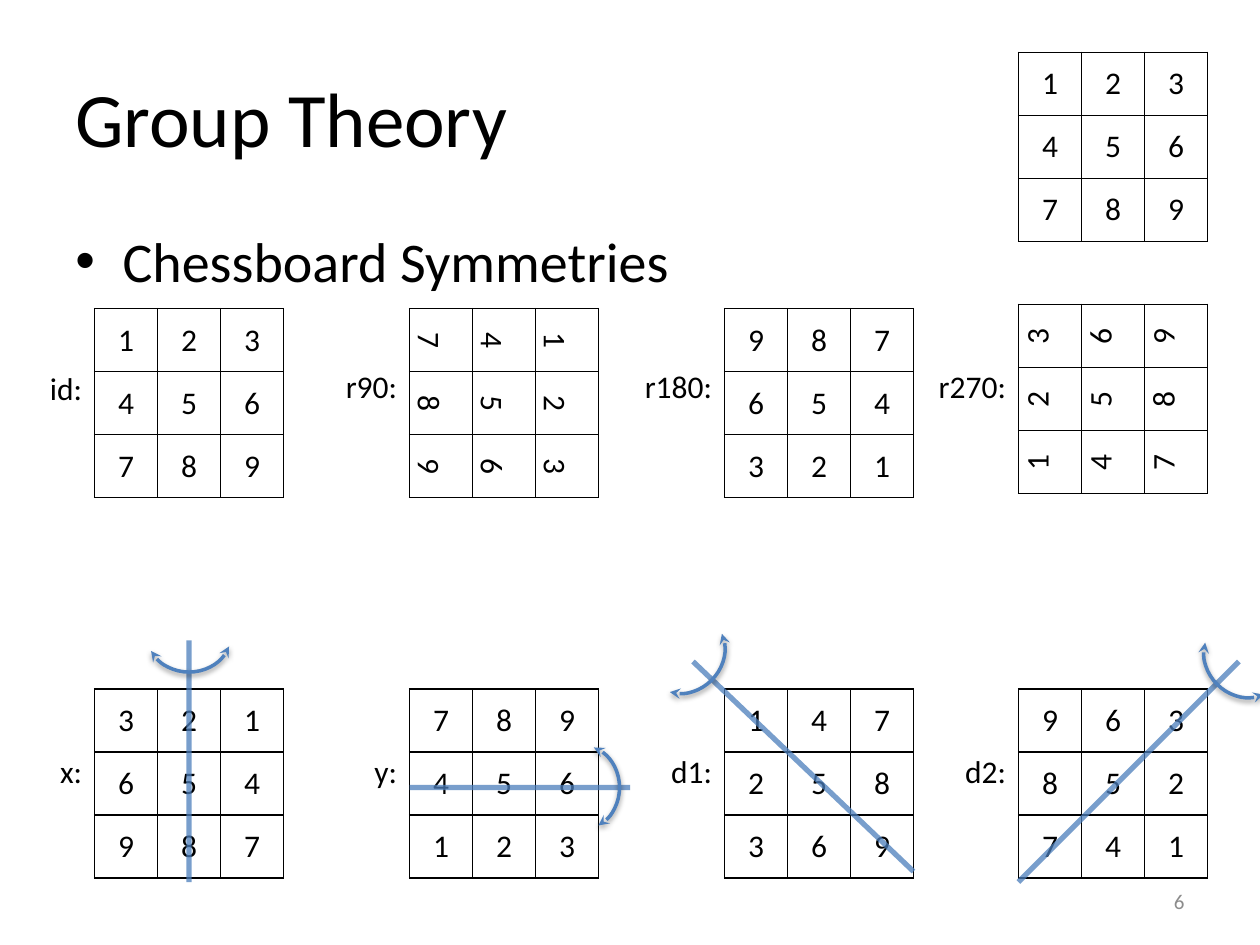
from lxml import etree
from pptx import Presentation
from pptx.dml.color import RGBColor
from pptx.enum.shapes import MSO_CONNECTOR, MSO_SHAPE
from pptx.enum.text import MSO_ANCHOR as Anchor, PP_ALIGN as Align
from pptx.oxml.ns import qn
from pptx.util import Emu, Pt

COLORS = {
    "text": "000000",
    "border": "000000",
    "axis": "4B7EBC",
    "arc": "4F81BD",
    "shadow": "000000",
    "number": "8C8C8C",
}
FONT = "Calibri"
CELL = 60  # side of one board square
ARC_W, ARC_H = 80, 70

# Columns: board left, label width
COLUMNS = [(90, 150), (390, 170), (690, 170), (970, 170)]

# Rotations: label, squares, board top, label offset, text direction
ROTATIONS = [
    ("id:", "123 456 789", 294, 52, None),
    ("r90:", "741 852 963", 294, 50, "vert"),
    ("r180:", "987 654 321", 294, 50, None),
    ("r270:", "369 258 147", 290, 54, "vert270"),
]

# Reflections: label, squares, then axis ends, arc corner (from the board) and turn
REFLECTIONS = [
    ("x:", "321 654 987", (90, -46, 90, 184), (50, -86), 180),
    ("y:", "789 456 123", (0, 94, 210, 94), (125, 59), 90),
    ("d1:", "147 258 369", (-30, -26, 180, 174), (-77, -68), 135),
    ("d2:", "963 852 741", (210, -26, 0, 184), (174, -64), 225),
]


def px(length):
    return Emu(length * 7620)  # 120 px to the inch


def rgb(name):
    return RGBColor.from_string(COLORS[name])


def add_element(parent, tag, **attributes):
    return etree.SubElement(parent, qn(tag), attributes)


def style(paragraph, size, color="text", align=Align.LEFT):
    paragraph.alignment = align
    paragraph.font.name = FONT
    paragraph.font.size = Pt(size)
    paragraph.font.color.rgb = rgb(color)


def add_text(slide, box, text, size, color="text", align=Align.LEFT, anchor=Anchor.TOP):
    frame = slide.shapes.add_textbox(*map(px, box)).text_frame
    frame.word_wrap = True
    frame.vertical_anchor = anchor
    paragraph = frame.paragraphs[0]
    paragraph.text = text
    style(paragraph, size, color, align)
    return paragraph


def add_heading(slide, left, top, width):
    add_text(slide, (left, top, width, 150), "Group Theory", 44, anchor=Anchor.MIDDLE)
    topic = add_text(slide, (left, top + 174, width, 594), "Chessboard Symmetries", 32)
    topic.space_before = Pt(6.4)
    # Hanging bullet
    properties = topic._p.get_or_add_pPr()
    properties.set("marL", "342900")
    properties.set("indent", "-342900")
    add_element(properties, "a:buFont", typeface="Arial")
    add_element(properties, "a:buChar", char="•")


def add_borders(cell):
    properties = cell._tc.get_or_add_tcPr()
    for side in "LRTB":
        border = add_element(properties, f"a:ln{side}", w="12700")
        fill = add_element(border, "a:solidFill")
        add_element(fill, "a:srgbClr", val=COLORS["border"])


def add_board(slide, left, top, squares, direction=None):
    rows = squares.split()
    size = px(CELL * 3)
    table = slide.shapes.add_table(3, 3, px(left), px(top), size, size).table
    table.first_row = table.horz_banding = False
    for r, row in enumerate(rows):
        for c, square in enumerate(row):
            cell = table.cell(r, c)
            cell.text = square
            style(cell.text_frame.paragraphs[0], 18, align=Align.CENTER)
            cell.vertical_anchor = Anchor.MIDDLE
            cell.margin_left = cell.margin_right = cell.margin_top = cell.margin_bottom = 0
            add_borders(cell)
            cell.fill.background()
            if direction:
                cell._tc.get_or_add_tcPr().set("vert", direction)


def add_label(slide, board_left, top, width, text):
    add_text(slide, (board_left - width, top, width, 48), text, 18, align=Align.RIGHT)


def add_axis(slide, left, top, ends):
    x1, y1, x2, y2 = ends
    axis = slide.shapes.add_connector(
        MSO_CONNECTOR.STRAIGHT, px(left + x1), px(top + y1), px(left + x2), px(top + y2))
    axis.line.width = Pt(3)
    axis.line.color.rgb = rgb("axis")
    properties = axis._element.spPr
    add_element(properties.find(".//" + qn("a:srgbClr")), "a:alpha", val="75000")
    add_element(properties, "a:effectLst")


def add_flip_arc(slide, left, top, turn):
    arc = slide.shapes.add_shape(MSO_SHAPE.ARC, px(left), px(top), px(ARC_W), px(ARC_H))
    arc.adjustments[0], arc.adjustments[1] = 117.364, 202.55
    arc.rotation = turn
    arc.fill.background()
    arc.line.color.rgb = rgb("arc")
    arc.line.width = Pt(2)
    # Arrowheads at both ends
    line = arc.line._get_or_add_ln()
    for end in ("a:headEnd", "a:tailEnd"):
        add_element(line, end, type="stealth")
    # Soft shadow below
    arc.shadow.inherit = False
    effects = arc._element.spPr.find(qn("a:effectLst"))
    shadow = add_element(effects, "a:outerShdw", blurRad="39370", dist="20320",
                         dir="5400000", rotWithShape="0")
    color = add_element(shadow, "a:srgbClr", val=COLORS["shadow"])
    add_element(color, "a:alpha", val="38000")


def add_rotations(slide):
    for (left, width), (label, squares, top, offset, direction) in zip(COLUMNS, ROTATIONS):
        add_board(slide, left, top, squares, direction)
        add_label(slide, left, top + offset, width, label)


def add_reflections(slide, top):
    for (left, width), (label, squares, ends, corner, turn) in zip(COLUMNS, REFLECTIONS):
        add_board(slide, left, top, squares)
        add_label(slide, left, top + 54, width, label)
        add_axis(slide, left, top, ends)
        add_flip_arc(slide, left + corner[0], top + corner[1], turn)


def main():
    deck = Presentation()
    deck.slide_width, deck.slide_height = px(1200), px(900)
    slide = deck.slides.add_slide(deck.slide_layouts[6])

    add_heading(slide, 60, 36, 1080)
    add_rotations(slide)
    add_reflections(slide, 656)
    # Slide number
    add_text(slide, (860, 834, 280, 48), "6", 12, "number", Align.RIGHT, Anchor.MIDDLE)
    # Reference board
    add_board(slide, 970, 50, "123 456 789")

    deck.save("out.pptx")


if __name__ == "__main__":
    main()
